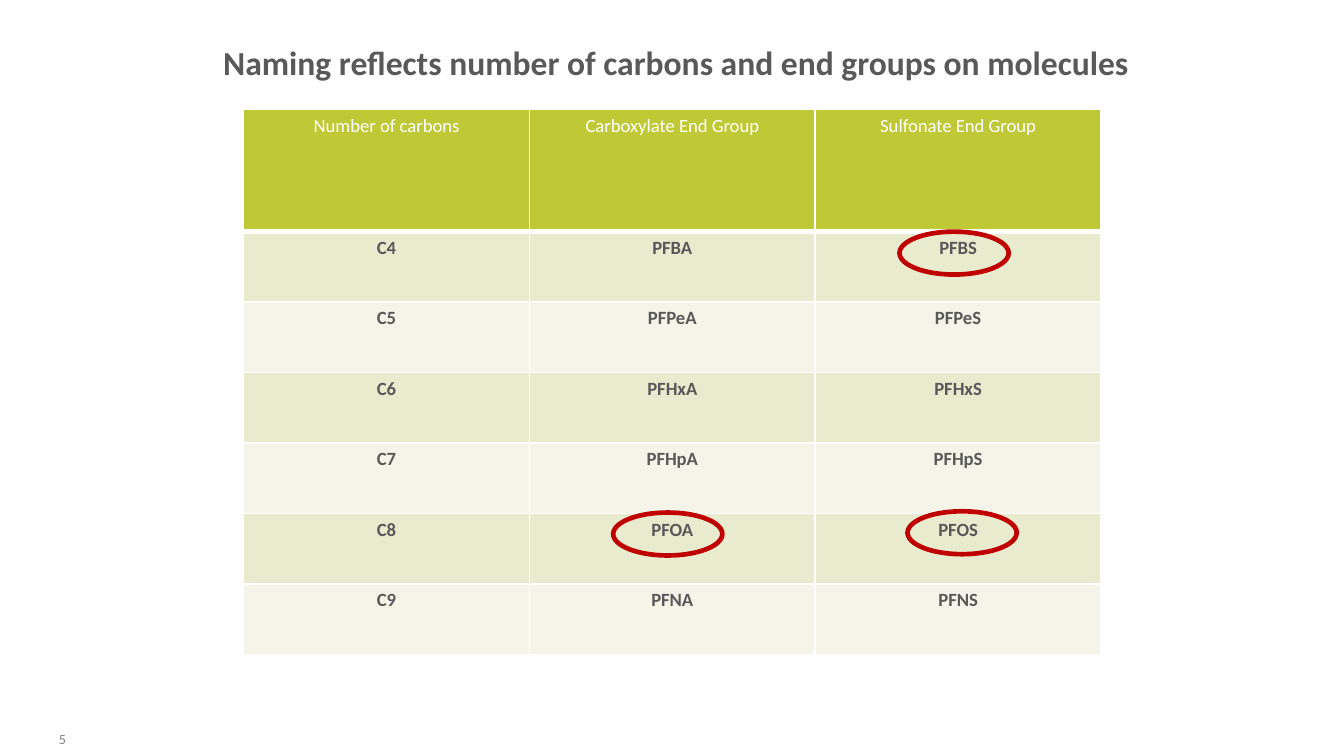
from dataclasses import dataclass

from lxml.etree import SubElement
from pptx import Presentation
from pptx.dml.color import RGBColor
from pptx.enum.shapes import MSO_SHAPE
from pptx.enum.text import MSO_ANCHOR, PP_ALIGN
from pptx.oxml.ns import qn
from pptx.util import Pt


@dataclass(frozen=True)
class Theme:
    font: str = "Calibri"
    text: str = "595959"
    muted: str = "808080"
    white: str = "FFFFFF"
    header: str = "BFC936"
    bands: tuple = ("E8EBCE", "F4F5E8")
    mark: str = "C00000"
    title_size: float = 18
    table_size: float = 10
    number_size: float = 7.5


@dataclass(frozen=True)
class Box:
    left: float
    top: float
    width: float
    height: float

    def lengths(self):
        return Pt(self.left), Pt(self.top), Pt(self.width), Pt(self.height)


THEME = Theme()
ROWS = [
    ("Number of carbons", "Carboxylate End Group", "Sulfonate End Group"),
    ("C4", "PFBA", "PFBS"),
    ("C5", "PFPeA", "PFPeS"),
    ("C6", "PFHxA", "PFHxS"),
    ("C7", "PFHpA", "PFHpS"),
    ("C8", "PFOA", "PFOS"),
    ("C9", "PFNA", "PFNS"),
]
HEADER_HEIGHT = 65.4
# Left and top of each ellipse, relative to the table
MARKS = [(351.4, 65.5), (355.7, 215.3), (198, 216)]


def write(text_frame, text, size, color, bold=False, align=PP_ALIGN.LEFT):
    text_frame.text = text
    para = text_frame.paragraphs[0]
    para.alignment = align
    for span in para.runs:
        span.font.name = THEME.font
        span.font.size = Pt(size)
        span.font.bold = bold
        span.font.color.rgb = RGBColor.from_string(color)


def set_borders(cell, bottom_width):
    properties = cell._tc.get_or_add_tcPr()
    for side, width in (("L", 1), ("R", 1), ("T", 1), ("B", bottom_width)):
        line = SubElement(properties, qn(f"a:ln{side}"), w=str(Pt(width)))
        fill = SubElement(line, qn("a:solidFill"))
        SubElement(fill, qn("a:srgbClr"), val=THEME.white)


def add_title(page, box, text):
    title = page.shapes.title
    title.left, title.top, title.width, title.height = box.lengths()
    frame = title.text_frame
    frame.word_wrap = False
    frame.vertical_anchor = MSO_ANCHOR.TOP
    write(frame, text, THEME.title_size, THEME.text, bold=True)


def add_naming_table(page, box):
    table = page.shapes.add_table(len(ROWS), len(ROWS[0]), *box.lengths()).table
    for column in table.columns:
        column.width = Pt(box.width / len(ROWS[0]))
    body_height = (box.height - HEADER_HEIGHT) / (len(ROWS) - 1)

    for index, names in enumerate(ROWS):
        is_header = index == 0
        table.rows[index].height = Pt(HEADER_HEIGHT if is_header else body_height)
        fill = THEME.header if is_header else THEME.bands[(index - 1) % 2]
        color = THEME.white if is_header else THEME.text
        for cell, name in zip(table.rows[index].cells, names):
            cell.margin_left = cell.margin_right = Pt(5)
            cell.margin_top = cell.margin_bottom = Pt(2.7)
            write(cell.text_frame, name, THEME.table_size, color,
                  bold=not is_header, align=PP_ALIGN.CENTER)
            # Borders come before the fill in the cell properties
            set_borders(cell, 3 if is_header else 1)
            cell.fill.solid()
            cell.fill.fore_color.rgb = RGBColor.from_string(fill)


def add_marks(page, box):
    for left, top in MARKS:
        place = Box(box.left + left, box.top + top, 58.5, 23)
        ellipse = page.shapes.add_shape(MSO_SHAPE.OVAL, *place.lengths())
        ellipse.shadow.inherit = False
        ellipse.fill.background()
        ellipse.line.color.rgb = RGBColor.from_string(THEME.mark)
        ellipse.line.width = Pt(2.5)


def add_page_number(page, box, number):
    frame = page.shapes.add_textbox(*box.lengths()).text_frame
    frame.word_wrap = True
    write(frame, number, THEME.number_size, THEME.muted)


def main():
    deck = Presentation()
    deck.slide_width, deck.slide_height = Pt(720), Pt(405)
    page = deck.slides.add_slide(deck.slide_layouts[5])

    table_box = Box(130.5, 58.6, 459.3, 292.2)
    add_title(page, Box(112.4, 19, 504, 29),
              "Naming reflects number of carbons and end groups on molecules")
    add_naming_table(page, table_box)
    add_marks(page, table_box)
    add_page_number(page, Box(24.5, 388, 30, 21.6), "5")
    deck.save("out.pptx")


if __name__ == "__main__":
    main()
